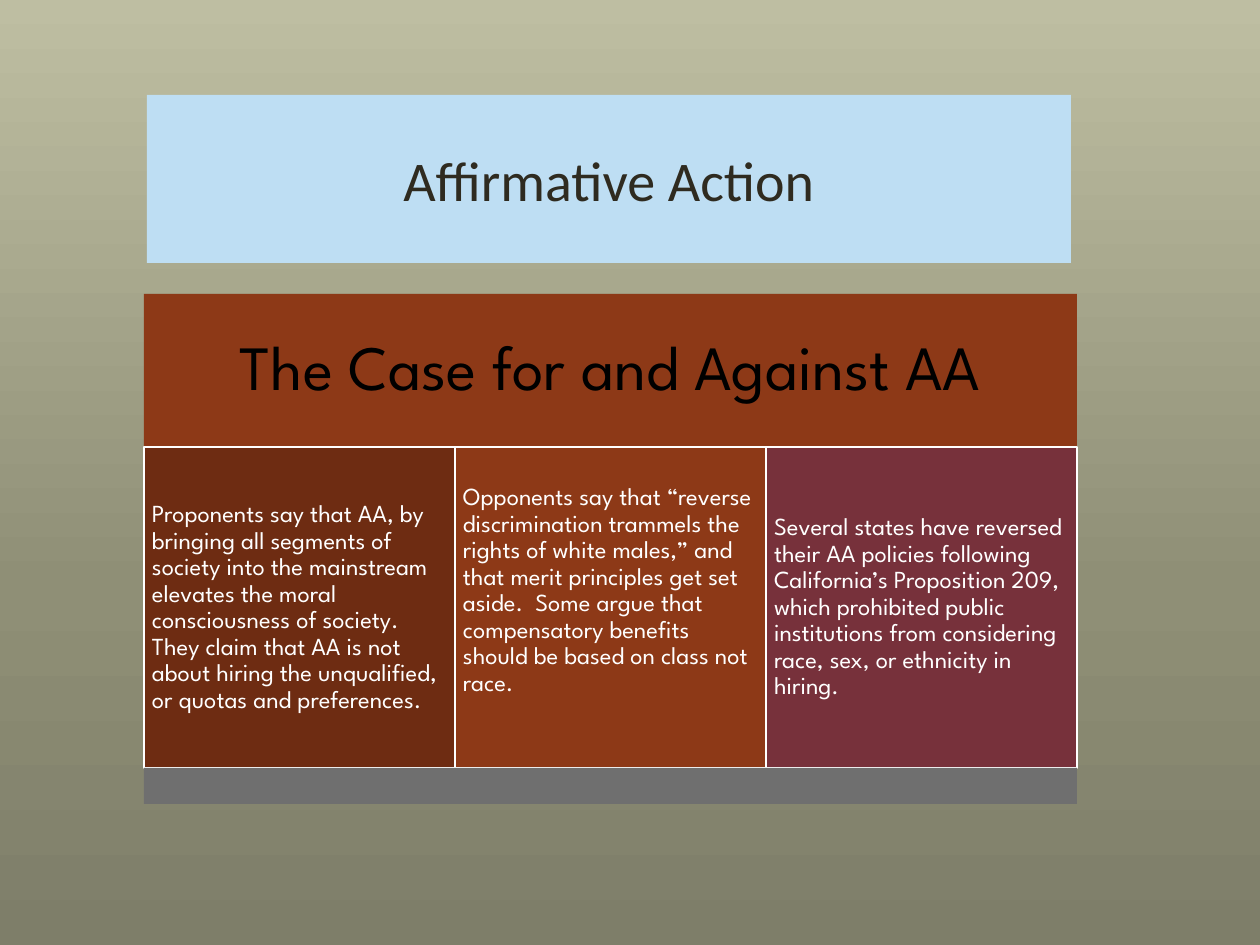
from copy import deepcopy

from pptx import Presentation
from pptx import util as u
from pptx.dml.color import RGBColor
from pptx.enum import shapes, text

SCALE = 914400 / 126
HEX = {
    "top": "BEBEA2", "middle": "8F8F76", "bottom": "7E7E69",
    "sky": "BEDEF3", "ink": "2F2B20", "black": "000000", "white": "FFFFFF",
    "rust": "8D3917", "brown": "6E2C12", "wine": "77313B", "gray": "6F6F6F",
}
POINTS = [
    ("brown", 8, "Proponents say that AA, by bringing all segments of society into the "
     "mainstream elevates the moral consciousness of society. They claim that AA is not "
     "about hiring the unqualified, or quotas and preferences."),
    ("rust", 42, "Opponents say that “reverse discrimination trammels the rights of white "
     "males,” and that merit principles get set aside.  Some argue that compensatory "
     "benefits should be based on class not race."),
    ("wine", 8, "Several states have reversed their AA policies following California’s "
     "Proposition 209, which prohibited public institutions from considering race, sex, "
     "or ethnicity in hiring."),
]


def px(n):
    """Turn px into EMU."""
    return u.Emu(round(n * SCALE))


def rgb(name):
    """Look up a colour by name."""
    return RGBColor.from_string(HEX[name])


def block(slide, box, fill, line=None):
    """Draw a filled rectangle."""
    shape = slide.shapes.add_shape(shapes.MSO_SHAPE.RECTANGLE, *map(px, box))
    shape.shadow.inherit = False
    shape.fill.solid()
    shape.fill.fore_color.rgb = rgb(fill)
    if line:
        shape.line.color.rgb = rgb(line)
        shape.line.width = u.Pt(1.25)
    else:
        shape.line.fill.background()
    return shape


def write(shape, words, size=14, color="white", font="League Spartan",
          align="LEFT", space=0.9, pad=8, base=None):
    """Set the formatted text of a shape."""
    frame = shape.text_frame
    frame.word_wrap = True
    frame.vertical_anchor = text.MSO_ANCHOR.MIDDLE
    frame.margin_left = frame.margin_top = frame.margin_right = px(pad)
    frame.margin_bottom = px(pad if base is None else base)
    para = frame.paragraphs[0]
    para.alignment = text.PP_ALIGN[align]
    para.line_spacing = space
    run = para.add_run()
    run.text = words
    run.font.name = font
    run.font.size = u.Pt(size)
    run.font.color.rgb = rgb(color)


def paint(slide):
    """Give the slide its three-stop gradient background."""
    fill = slide.background.fill
    fill.gradient()
    fill.gradient_angle = 270
    first = slide.element.xpath(".//a:gsLst/a:gs")[0]
    first.addnext(deepcopy(first))
    names = ("top", "middle", "bottom")
    for stop, name, place in zip(fill.gradient_stops, names, (0, 0.62, 1)):
        stop.color.rgb = rgb(name)
        stop.position = place


def title(slide, box):
    """Place the title band."""
    write(block(slide, box, "sky"), "Affirmative Action", size=32, color="ink",
          font="Calibri", align="CENTER", space=1.0)


def panel(slide, box):
    """Place the heading, three columns and foot bar."""
    x, y, w, h = box
    head, foot = 153, 36
    write(block(slide, (x, y, w, head), "rust"), "The Case for and Against AA",
          size=36, color="black", align="CENTER", pad=19)
    wide = w // len(POINTS)
    for i, (fill, base, words) in enumerate(POINTS):
        cell = (x + i * wide, y + head, wide, h - head - foot)
        write(block(slide, cell, fill, line="white"), words, base=base)
    block(slide, (x, y + h - foot, w, foot), "gray")


def main():
    """Build and save the slide."""
    deck = Presentation()
    deck.slide_width, deck.slide_height = px(1260), px(945)
    slide = deck.slides.add_slide(deck.slide_layouts[6])
    paint(slide)
    title(slide, (147, 95, 924, 168))
    panel(slide, (144, 294, 933, 510))
    deck.save("out.pptx")


if __name__ == "__main__":
    main()
